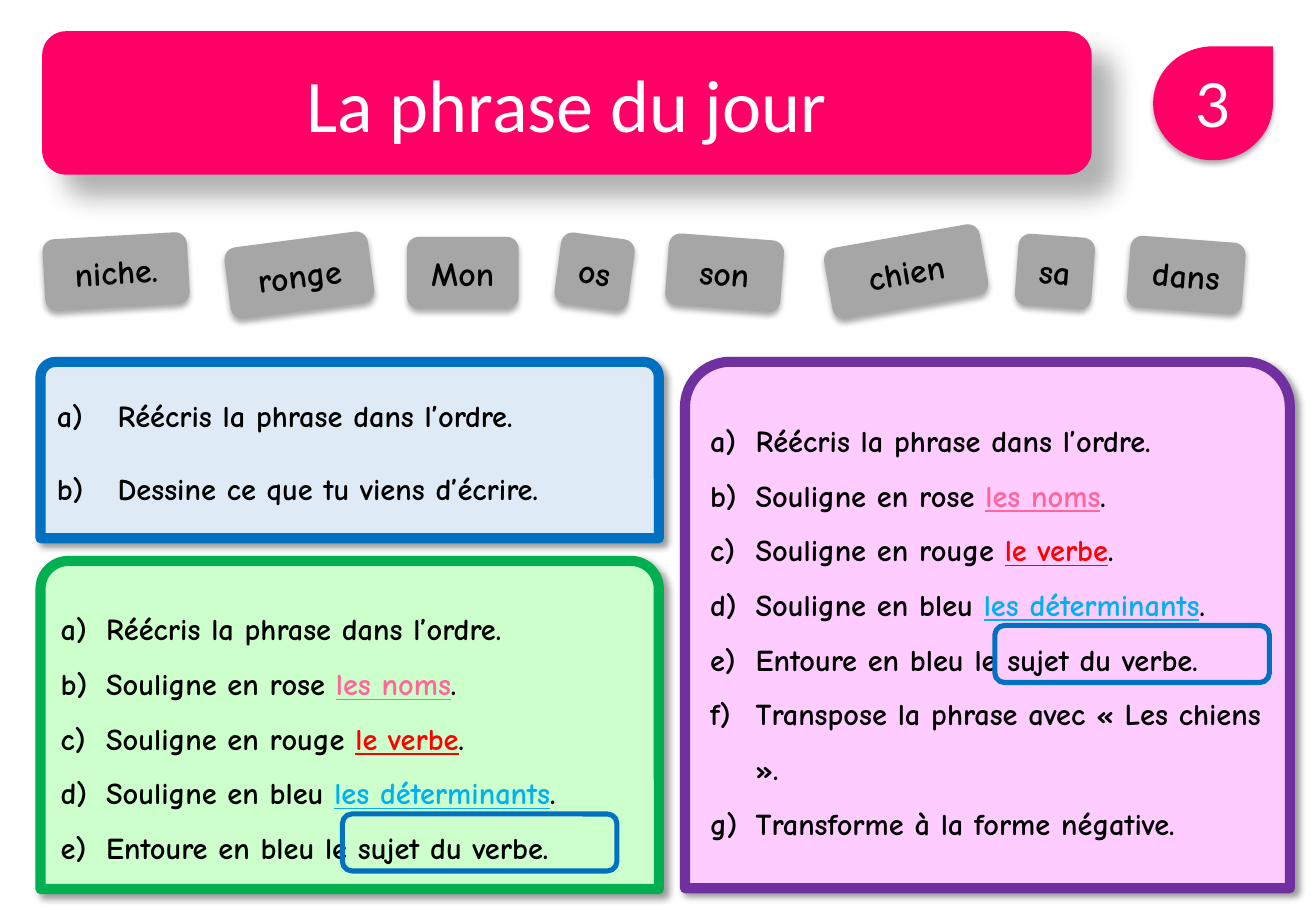
"""Build the "La phrase du jour" exercise slide, number 3."""
from lxml.etree import SubElement
from pptx import Presentation
from pptx.dml.color import RGBColor
from pptx.enum.shapes import MSO_SHAPE as SHAPE
from pptx.enum.text import MSO_ANCHOR as ANCHOR, PP_ALIGN as ALIGN
from pptx.oxml.ns import qn
from pptx.util import Pt

rgb = RGBColor.from_string
PINK, GREY, BLUE = "FF0066", "A6A6A6", "0070C0"
SOFT = ("32", 3.5, 2.2, 90)
CORNER = ("40", 4, 3, 45)
WIDE = ("30", 15, 18, 45)


def add_block(kind, box, fill=None, line=None, width=0, shadow=None, rotation=0):
    block = slide.shapes.add_shape(kind, *[Pt(v) for v in box])
    block.rotation = rotation
    block.shadow.inherit = False
    if fill:
        block.fill.solid()
        block.fill.fore_color.rgb = rgb(fill)
    else:
        block.fill.background()
    if line:
        block.line.color.rgb = rgb(line)
        block.line.width = Pt(width)
    else:
        block.line.fill.background()
    if shadow:
        opacity, blur, distance, angle = shadow
        effects = block._element.spPr.find(qn("a:effectLst"))
        outer = SubElement(effects, qn("a:outerShdw"), blurRad=str(Pt(blur)),
                           dist=str(Pt(distance)), dir=str(angle * 60000),
                           algn="ctr", rotWithShape="0")
        black = SubElement(outer, qn("a:srgbClr"), val="000000")
        SubElement(black, qn("a:alpha"), val=opacity + "000")
    frame = block.text_frame
    frame.word_wrap = True
    frame.vertical_anchor = ANCHOR.MIDDLE
    return block


def add_text(paragraph, text, size=18, font="Comic Neue", color="000000",
             bold=True, underline=False):
    run = paragraph.add_run()
    run.text = text
    run.font.size = Pt(size)
    run.font.name = font
    run.font.bold = bold
    run.font.underline = underline
    run.font.color.rgb = rgb(color)


deck = Presentation()
deck.slide_width, deck.slide_height = Pt(780), Pt(540)
slide = deck.slides.add_slide(deck.slide_layouts[6])

rewrite = [("Réécris la phrase dans l’ordre.", "", "000000")]
draw = [("Dessine ce que tu viens d’écrire.", "", "000000")]
analyse = [
    ("Souligne en rose ", "les noms", "FF6699"),
    ("Souligne en rouge ", "le verbe", "FF0000"),
    ("Souligne en bleu ", "les déterminants", "00B0F0"),
    ("Entoure en bleu le sujet du verbe.", "", "000000"),
]
transform = [
    ("Transpose la phrase avec « Les chiens ».", "", "000000"),
    ("Transforme à la forme négative.", "", "000000"),
]

panels = [
    ((406, 214.5, 358.5, 312), "FFCCFF", "7030A0",
     rewrite + analyse + transform, 27, 1, 1.5, 0),
    ((24, 332.5, 366.5, 194.5), "CCFFCC", "00B050",
     rewrite + analyse, 27, 1.5, 1.5, 0),
    ((24, 214.5, 366.5, 104.5), "DEEBF7", BLUE,
     rewrite + draw, 36, 1, 1, 21.6),
]
for box, fill, border, tasks, indent, first_spacing, spacing, gap in panels:
    panel = add_block(SHAPE.ROUND_2_SAME_RECTANGLE, box, fill, border, 6, CORNER)
    panel.adjustments[0] = 0.085
    panel.adjustments[1] = 0
    for i, (instruction, target, color) in enumerate(tasks):
        frame = panel.text_frame
        task = frame.add_paragraph() if i else frame.paragraphs[0]
        task.alignment = ALIGN.LEFT
        task.line_spacing = spacing if i else first_spacing
        task.space_before = Pt(gap if i else 0)
        layout = task._p.get_or_add_pPr()
        layout.set("marL", str(Pt(indent)))
        layout.set("indent", str(-Pt(indent)))
        SubElement(layout, qn("a:buFont"), typeface="+mj-lt")
        SubElement(layout, qn("a:buAutoNum"), type="alphaLcParenR")
        add_text(task, instruction)
        if target:
            add_text(task, target, color=color, underline=True)
            add_text(task, ".")

title = add_block(SHAPE.ROUNDED_RECTANGLE, (25, 18.5, 622, 85), PINK, shadow=WIDE)
number = add_block(SHAPE.TEAR, (683.5, 27.5, 71, 67.5), PINK, shadow=SOFT)
number.text_frame.margin_left = number.text_frame.margin_right = 0
for badge, text, size, font in [(title, "La phrase du jour", 44, "Calibri"),
                                (number, "3", 36, "Lato")]:
    heading = badge.text_frame.paragraphs[0]
    heading.alignment = ALIGN.CENTER
    add_text(heading, text, size=size, font=font, color="FFFFFF", bold=False)

words = [
    ("niche.", 26, 139.7, 85.7, -3.3),
    ("ronge", 134.6, 141.8, 85.7, -7.5),
    ("Mon", 241.2, 140.4, 66.2, 0),
    ("os", 330.5, 139.7, 44, 7.6),
    ("son", 395.3, 140.4, 68.4, 4.3),
    ("chien", 490.3, 139.7, 93.6, -10.1),
    ("sa", 602.6, 139.7, 45.4, 4.3),
    ("dans", 668.9, 141.8, 68.4, 4.3),
]
for word, left, top, width, tilt in words:
    label = add_block(SHAPE.ROUNDED_RECTANGLE, (left, top, width, 42.5), GREY,
                      shadow=SOFT, rotation=tilt)
    caption = label.text_frame.paragraphs[0]
    caption.alignment = ALIGN.CENTER
    add_text(caption, word, size=20)

for left, top in [(203, 482.5), (589.7, 370.8)]:
    add_block(SHAPE.ROUNDED_RECTANGLE, (left, top, 162.7, 33.8), line=BLUE, width=3)

deck.save("out.pptx")
